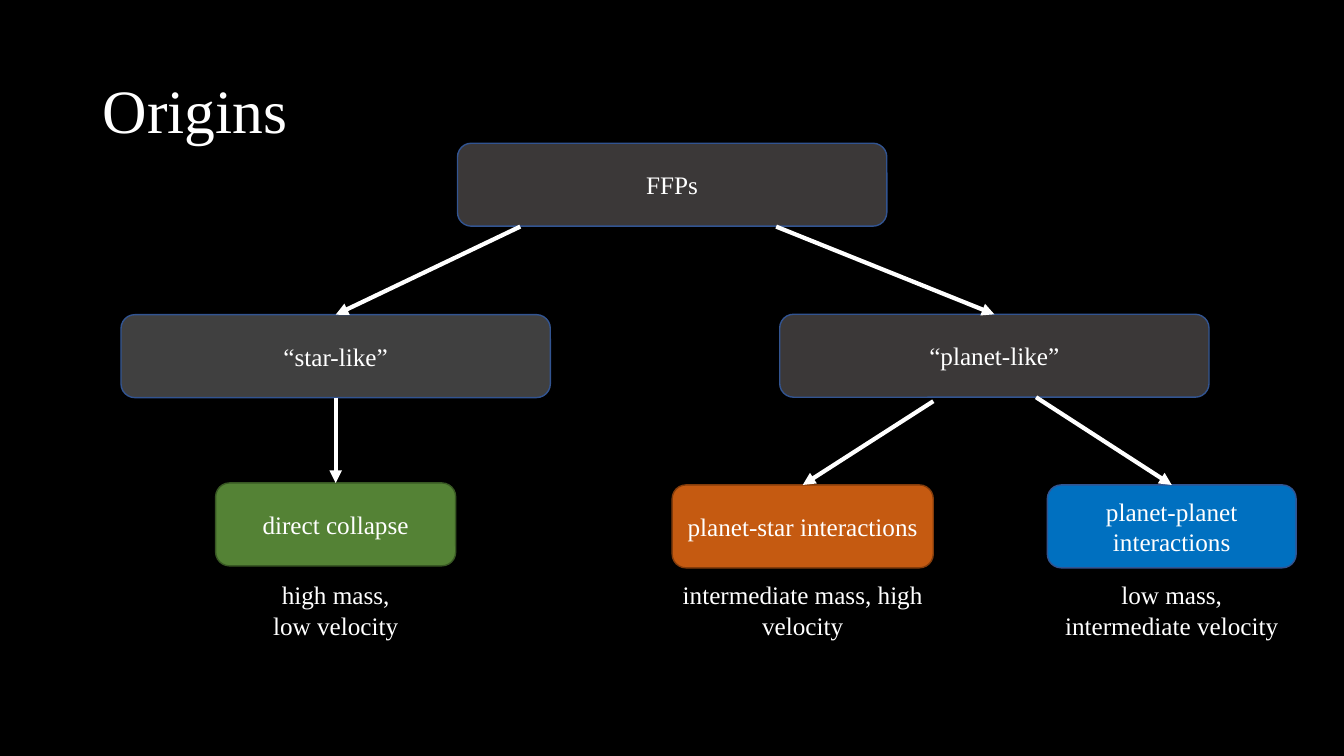
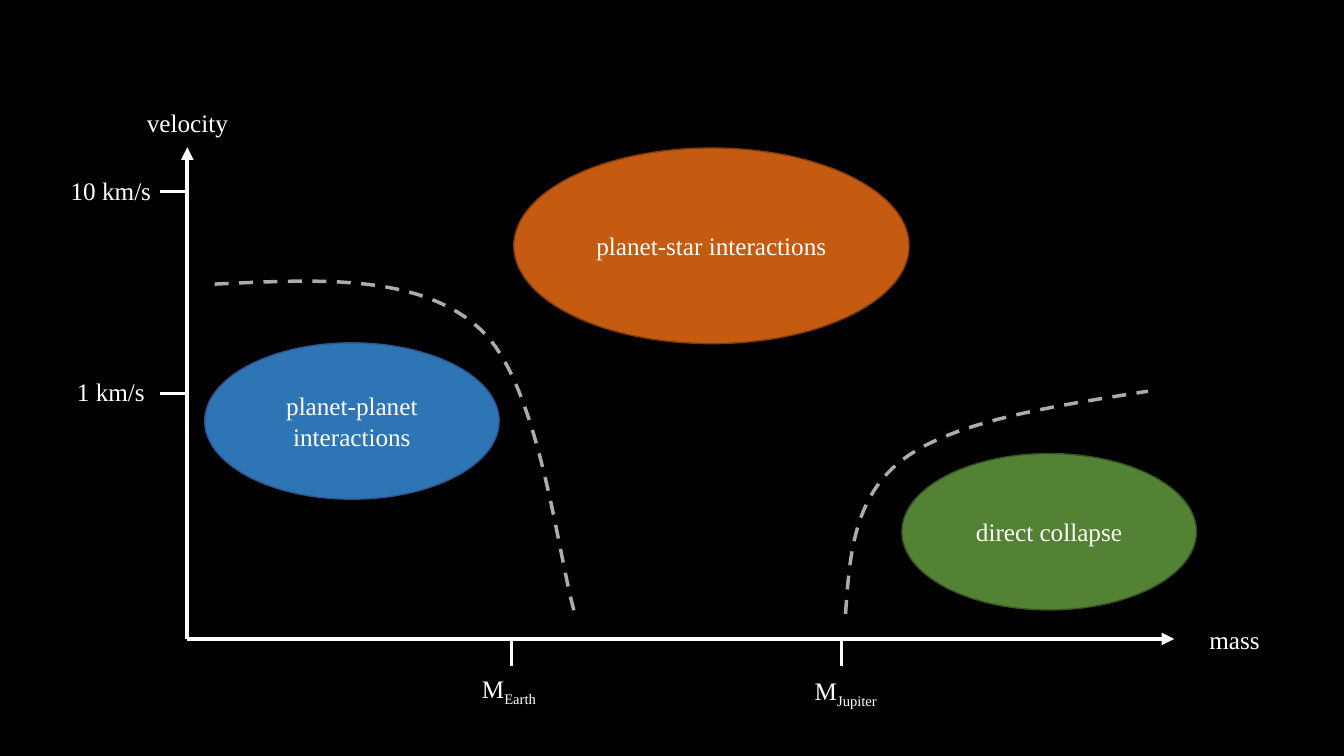
from lxml import etree
from pptx import Presentation
from pptx.dml.color import RGBColor
from pptx.enum import dml, shapes, text
from pptx.oxml import ns
from pptx.util import Cm, Pt

# Shared style
FONT = "Times New Roman"
BLACK = RGBColor(0x00, 0x00, 0x00)
WHITE = RGBColor(0xFF, 0xFF, 0xFF)
WARM_GRAY = RGBColor(0x3B, 0x38, 0x38)
GRAY = RGBColor(0x40, 0x40, 0x40)
DASH_GRAY = RGBColor(0xAF, 0xAB, 0xAB)
NAVY = RGBColor(0x32, 0x54, 0x91)
BLUE = RGBColor(0x00, 0x70, 0xC0)
SOFT_BLUE = RGBColor(0x2E, 0x75, 0xB6)
ORANGE = RGBColor(0xC5, 0x5A, 0x11)
BROWN = RGBColor(0x84, 0x3C, 0x0B)
GREEN = RGBColor(0x54, 0x82, 0x35)
DARK_GREEN = RGBColor(0x38, 0x57, 0x23)

COLLAPSE, STAR, PLANET = ("direct collapse", "planet-star interactions",
                          "planet-planet interactions")

# Content of the origins tree (cm): key -> text, centre x, top, width, fill, line
BOX_H = 2.09
BOXES = {
    "root": ("FFPs", 16.94, 3.61, 10.82, WARM_GRAY, NAVY),
    "star-like": ("“star-like”", 8.46, 7.93, 10.82, GRAY, NAVY),
    "planet-like": ("“planet-like”", 25.06, 7.92, 10.82, WARM_GRAY, NAVY),
    "star": (STAR, 20.23, 12.22, 6.58, ORANGE, BROWN),
    "planet": (PLANET, 29.53, 12.22, 6.27, BLUE, NAVY),
    "collapse": (COLLAPSE, 8.46, 12.17, 6.05, GREEN, DARK_GREEN),
}
# Parent, child, start point (None: middle of the parent's lower side)
BRANCHES = [
    ("root", "star-like", (13.11, 5.71)),
    ("root", "planet-like", (19.56, 5.71)),
    ("planet-like", "star", (23.52, 10.11)),
    ("planet-like", "planet", (26.11, 10.01)),
    ("star-like", "collapse", None),
]
CAPTION_TOP, CAPTION_W, CAPTION_H = 14.48, 7.11, 1.8
CAPTIONS = {
    "collapse": ["high mass,", "low velocity"],
    "star": ["intermediate mass, high velocity"],
    "planet": ["low mass,", "intermediate velocity"],
}

# Content of the mass-velocity diagram (cm)
ORIGIN_X, ORIGIN_Y = 4.72, 16.1
AXIS_TOP, AXIS_RIGHT = 3.71, 29.59
TICK = 0.69
VELOCITY_TICKS = [9.91, 4.83]
MASS_TICKS = [12.9, 21.21]
LABEL_W, LABEL_H = 3.05, 1.02
# Text, subscript, left, top
LABELS = [
    ("M", "Earth", 11.3, 16.84),
    ("M", "Jupiter", 19.79, 16.89),
    ("1 km/s", "", 1.27, 9.35),
    ("10 km/s", "", 1.27, 4.29),
    ("mass", "", 29.59, 15.6),
    ("velocity", "", 3.2, 2.59),
]
# Start point, then control, control, end for each Bézier piece
BORDERS = [
    [(5.41, 7.16), (8, 7.04), (10.59, 6.88), (12.12, 8.31),
     (13.64, 9.7), (14.1, 14.35), (14.53, 15.6)],
    [(21.31, 15.47), (21.41, 14), (21.51, 12.5), (22.78, 11.56),
     (24.05, 10.62), (26.49, 10.24), (28.93, 9.86)],
]
STEPS = 24
# Text, left, top, width, height, fill, line
REGIONS = [
    (PLANET, 5.16, 8.64, 7.42, 3.94, SOFT_BLUE, NAVY),
    (STAR, 12.95, 3.73, 9.96, 4.93, ORANGE, BROWN),
    (COLLAPSE, 22.73, 11.43, 7.42, 3.94, GREEN, DARK_GREEN),
]


def format_text(tf, size=18, align=text.PP_ALIGN.CENTER):
    tf.word_wrap = True
    for p in tf.paragraphs:
        p.alignment = align
        for r in p.runs:
            r.font.name, r.font.size = FONT, Pt(size)
            r.font.color.rgb = WHITE


def add_box(slide, kind, label, left, top, width, height, fill, line):
    sp = slide.shapes.add_shape(kind, Cm(left), Cm(top), Cm(width), Cm(height))
    sp.shadow.inherit = False
    sp.fill.solid()
    sp.fill.fore_color.rgb = fill
    sp.line.color.rgb = line
    sp.line.width = Pt(1)
    sp.text_frame.text = label
    sp.text_frame.vertical_anchor = text.MSO_ANCHOR.MIDDLE
    format_text(sp.text_frame)
    return sp


def add_label(slide, lines, left, top, width, height, subscript=""):
    sp = slide.shapes.add_textbox(Cm(left), Cm(top), Cm(width), Cm(height))
    tf = sp.text_frame
    tf.text = "\n".join(lines)
    if subscript:
        r = tf.paragraphs[0].add_run()
        r.text = subscript
        r._r.get_or_add_rPr().set("baseline", "-25000")
    format_text(tf)
    tf.auto_size = text.MSO_AUTO_SIZE.SHAPE_TO_FIT_TEXT


def add_line(slide, start, end, width=3, arrow=True):
    cx = slide.shapes.add_connector(shapes.MSO_CONNECTOR.STRAIGHT,
                                    *map(Cm, start + end))
    cx.line.color.rgb = WHITE
    cx.line.width = Pt(width)
    if arrow:
        ln = cx.line._get_or_add_ln()
        etree.SubElement(ln, ns.qn("a:tailEnd"), type="triangle")
    etree.SubElement(cx._element.spPr, ns.qn("a:effectLst"))
    return cx


def curve_points(nodes):
    points = [nodes[0]]
    for i in range(0, len(nodes) - 1, 3):
        a, b, c, d = nodes[i:i + 4]
        for n in range(1, STEPS + 1):
            t = n / STEPS
            s = 1 - t
            points.append(tuple(
                s**3 * a[k] + 3 * s * s * t * b[k] + 3 * s * t * t * c[k] + t**3 * d[k]
                for k in (0, 1)))
    return [(Cm(x), Cm(y)) for x, y in points]


def add_border(slide, nodes):
    start, *rest = curve_points(nodes)
    builder = slide.shapes.build_freeform(*start)
    builder.add_line_segments(rest, close=False)
    sp = builder.convert_to_shape()
    sp.shadow.inherit = False
    sp.fill.background()
    sp.line.color.rgb = DASH_GRAY
    sp.line.width = Pt(2.5)
    sp.line.dash_style = dml.MSO_LINE.DASH


def build_origins(prs):
    slide = prs.slides.add_slide(prs.slide_layouts[5])

    # Title
    title = slide.shapes.title
    title.left, title.top, title.width, title.height = map(Cm, (2.33, 1.01, 29.21, 3.68))
    tf = title.text_frame
    tf.text = "Origins"
    tf.vertical_anchor = text.MSO_ANCHOR.MIDDLE
    tf.paragraphs[0].line_spacing = 0.9
    format_text(tf, 44, text.PP_ALIGN.LEFT)

    # Boxes
    nodes = {}
    for key, (label, mid, top, width, fill, line) in BOXES.items():
        nodes[key] = add_box(slide, shapes.MSO_SHAPE.ROUNDED_RECTANGLE, label,
                             mid - width / 2, top, width, BOX_H, fill, line)

    # Arrows
    for parent, child, start in BRANCHES:
        cx = add_line(slide, start or (0, 0), BOXES[child][1:3])
        if start is None:
            cx.begin_connect(nodes[parent], 2)
        cx.end_connect(nodes[child], 0)

    # Captions
    for key, lines in CAPTIONS.items():
        add_label(slide, lines, BOXES[key][1] - CAPTION_W / 2, CAPTION_TOP,
                  CAPTION_W, CAPTION_H)


def build_diagram(prs):
    slide = prs.slides.add_slide(prs.slide_layouts[6])

    # Axes and ticks
    origin = (ORIGIN_X, ORIGIN_Y)
    add_line(slide, origin, (ORIGIN_X, AXIS_TOP))
    add_line(slide, origin, (AXIS_RIGHT, ORIGIN_Y))
    for y in VELOCITY_TICKS:
        add_line(slide, (ORIGIN_X - TICK, y), (ORIGIN_X, y), 2, False)
    for x in MASS_TICKS:
        add_line(slide, (x, ORIGIN_Y + TICK), (x, ORIGIN_Y), 2, False)

    # Dashed borders, labels and regions
    for nodes in BORDERS:
        add_border(slide, nodes)
    for label, subscript, left, top in LABELS:
        add_label(slide, [label], left, top, LABEL_W, LABEL_H, subscript)
    for region in REGIONS:
        add_box(slide, shapes.MSO_SHAPE.OVAL, *region)


def main():
    prs = Presentation()
    prs.slide_width, prs.slide_height = Cm(33.87), Cm(19.05)
    background = prs.slide_master.background.fill
    background.solid()
    background.fore_color.rgb = BLACK
    build_origins(prs)
    build_diagram(prs)
    prs.save("out.pptx")


if __name__ == "__main__":
    main()
